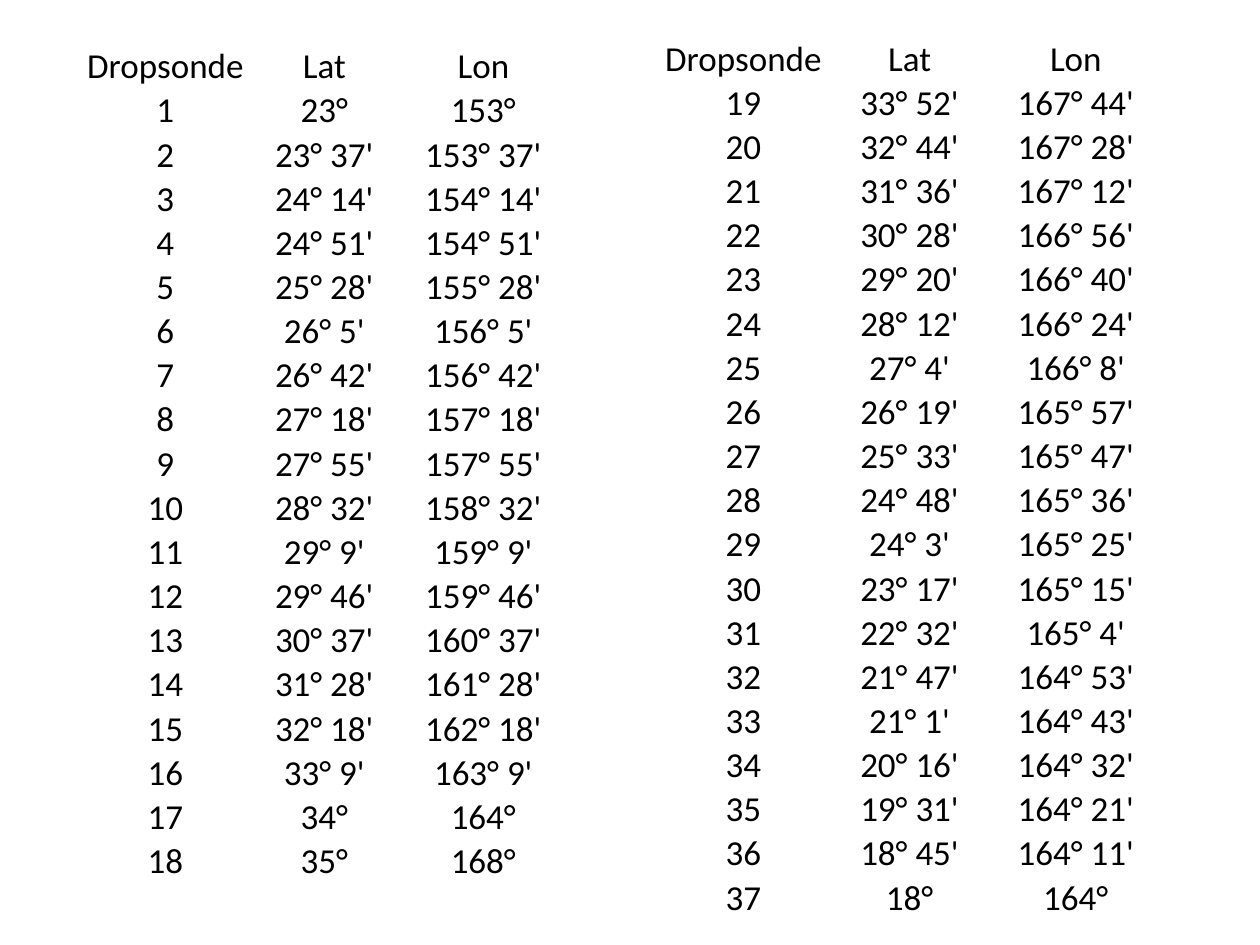
"""Build a slide with two tables of dropsonde positions."""
from dataclasses import dataclass

from pptx import Presentation
from pptx.dml.color import RGBColor
from pptx.enum import text as t
from pptx.util import Pt

HEAD = ("Dropsonde", "Lat", "Lon")
ROW = 24.6
INK = "000000"

WEST = """23°|153°
23° 37'|153° 37'
24° 14'|154° 14'
24° 51'|154° 51'
25° 28'|155° 28'
26° 5'|156° 5'
26° 42'|156° 42'
27° 18'|157° 18'
27° 55'|157° 55'
28° 32'|158° 32'
29° 9'|159° 9'
29° 46'|159° 46'
30° 37'|160° 37'
31° 28'|161° 28'
32° 18'|162° 18'
33° 9'|163° 9'
34°|164°
35°|168°"""

EAST = """33° 52'|167° 44'
32° 44'|167° 28'
31° 36'|167° 12'
30° 28'|166° 56'
29° 20'|166° 40'
28° 12'|166° 24'
27° 4'|166° 8'
26° 19'|165° 57'
25° 33'|165° 47'
24° 48'|165° 36'
24° 3'|165° 25'
23° 17'|165° 15'
22° 32'|165° 4'
21° 47'|164° 53'
21° 1'|164° 43'
20° 16'|164° 32'
19° 31'|164° 21'
18° 45'|164° 11'
18°|164°"""


@dataclass
class Grid:
    left: float
    top: float
    col: float
    first: int
    data: str

    def rows(self) -> list:
        lines = enumerate(self.data.splitlines(), self.first)
        return [HEAD] + [(str(num), *line.split("|")) for num, line in lines]


GRIDS = [
    Grid(49, 25.2, 90.9, 1, WEST),
    Grid(377.3, 20.9, 95, 19, EAST),
]


def tint(font, code: str) -> None:
    font.color.rgb = RGBColor.from_string(code)


def fill_cell(cell, words: str) -> None:
    cell.fill.background()
    cell.vertical_anchor = t.MSO_ANCHOR.BOTTOM
    cell.margin_left = cell.margin_right = cell.margin_top = Pt(0.72)
    cell.margin_bottom = Pt(0)
    para = cell.text_frame.paragraphs[0]
    para.text = words
    para.alignment = t.PP_ALIGN.CENTER
    font = para.runs[0].font
    font.name, font.size = "Calibri", Pt(20)
    tint(font, INK)


def draw_grid(slide, grid: Grid) -> None:
    rows = grid.rows()
    table = slide.shapes.add_table(
        len(rows), len(HEAD), Pt(grid.left), Pt(grid.top),
        Pt(grid.col * len(HEAD)), Pt(ROW * len(rows))).table
    table.first_row = table.horz_banding = False
    for r, row in enumerate(rows):
        for c, words in enumerate(row):
            fill_cell(table.cell(r, c), words)


def main() -> None:
    deck = Presentation()
    deck.slide_width, deck.slide_height = Pt(720), Pt(540)
    slide = deck.slides.add_slide(deck.slide_layouts[6])
    for grid in GRIDS:
        draw_grid(slide, grid)
    deck.save("out.pptx")


if __name__ == "__main__":
    main()
